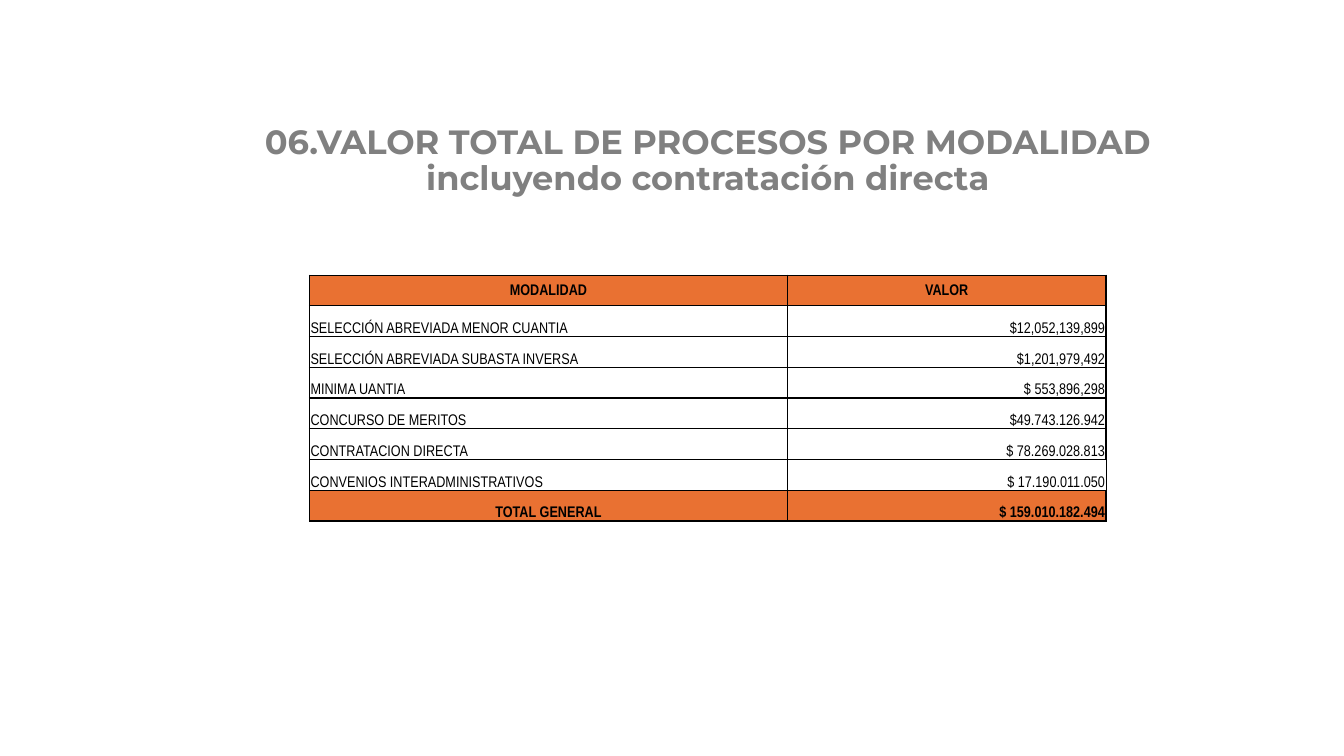
from lxml import etree
from pptx import Presentation
from pptx.dml.color import RGBColor
from pptx.enum.text import MSO_ANCHOR, PP_ALIGN
from pptx.oxml.ns import qn
from pptx.util import Inches, Pt

LEFT, CENTER, RIGHT = PP_ALIGN.LEFT, PP_ALIGN.CENTER, PP_ALIGN.RIGHT
MIDDLE, BOTTOM = MSO_ANCHOR.MIDDLE, MSO_ANCHOR.BOTTOM

SLIDE_WIDTH, SLIDE_HEIGHT = 13.33, 7.5
TITLE_LINES = ["06.VALOR TOTAL DE PROCESOS POR MODALIDAD", "incluyendo contratación directa"]
ROWS = [
    ("MODALIDAD", "VALOR"),
    ("SELECCIÓN ABREVIADA MENOR CUANTIA", "$12,052,139,899"),
    ("SELECCIÓN ABREVIADA SUBASTA INVERSA", "$1,201,979,492"),
    ("MINIMA UANTIA", "$ 553,896,298"),
    ("CONCURSO DE MERITOS", "$49.743.126.942"),
    ("CONTRATACION DIRECTA", "$ 78.269.028.813"),
    ("CONVENIOS INTERADMINISTRATIVOS", "$ 17.190.011.050"),
    ("TOTAL GENERAL", "$ 159.010.182.494"),
]
COLUMN_SHARES = (0.6, 0.4)
THIN, THICK = 0.5, 1
HORIZONTAL_RULES = (THICK, THICK, THIN, THIN, THICK, THICK, THIN, THIN, THICK)
OUTER_RULES = (THICK,) * 6 + (THIN, THICK)
INNER_RULES = (THICK,) + (THIN,) * 6 + (THICK,)
ORANGE, GREY, BLACK = "E97132", "808080", "000000"


def color(value):
    """Turn a hex string into a colour."""
    return RGBColor.from_string(value)


def add_run(paragraph, text, font_name, size, font_color, bold):
    """Add one formatted run to a paragraph."""
    run = paragraph.add_run()
    run.text = text
    run.font.name = font_name
    run.font.size = Pt(size)
    run.font.bold = bold
    run.font.color.rgb = color(font_color)


def fill_title(title, lines):
    """Place the title and write its lines."""
    title.left, title.top = Inches(1.48), Inches(1.12)
    title.width, title.height = Inches(11.08), Inches(0.89)
    title.text_frame.vertical_anchor = BOTTOM
    title.text_frame.word_wrap = True
    paragraph = title.text_frame.paragraphs[0]
    paragraph.alignment = CENTER
    paragraph.line_spacing = 0.9
    for index, line in enumerate(lines):
        if index:
            paragraph.add_line_break()
        add_run(paragraph, line, "Montserrat", 24, GREY, True)


def set_borders(cell, widths):
    """Draw the left, right, top and bottom borders of a cell."""
    properties = cell._tc.get_or_add_tcPr()
    for side, width in zip("LRTB", widths):
        line = etree.SubElement(properties, qn(f"a:ln{side}"), w=str(Pt(width)))
        solid = etree.SubElement(line, qn("a:solidFill"))
        etree.SubElement(solid, qn("a:srgbClr"), val=BLACK)


def fill_cell(cell, text, alignment, anchor, emphasized):
    """Write a cell and set its margins and fill."""
    cell.margin_left = cell.margin_right = cell.margin_top = Inches(0.01)
    cell.margin_bottom = 0
    cell.vertical_anchor = anchor
    if emphasized:
        cell.fill.solid()
        cell.fill.fore_color.rgb = color(ORANGE)
    else:
        cell.fill.background()
    paragraph = cell.text_frame.paragraphs[0]
    paragraph.alignment = alignment
    add_run(paragraph, text, "Arial Narrow", 11, BLACK, emphasized)


def add_value_table(slide, left, top, width, height):
    """Add the table of values with a header and a total row."""
    shape = slide.shapes.add_table(
        len(ROWS), len(COLUMN_SHARES), Inches(left), Inches(top), Inches(width), Inches(height))
    table = shape.table
    table.first_row = table.horz_banding = False
    for column, share in zip(table.columns, COLUMN_SHARES):
        column.width = Inches(width * share)
    last = len(ROWS) - 1
    for row, texts in enumerate(ROWS):
        outer, inner = OUTER_RULES[row], INNER_RULES[row]
        sides = ((outer, inner), (inner, outer))
        emphasized = row in (0, last)
        alignments = (CENTER if emphasized else LEFT, RIGHT if row else CENTER)
        for column, text in enumerate(texts):
            cell = table.cell(row, column)
            set_borders(cell, sides[column] + HORIZONTAL_RULES[row:row + 2])
            fill_cell(cell, text, alignments[column], BOTTOM if row else MIDDLE, emphasized)


def main():
    """Build and save the slide."""
    presentation = Presentation()
    presentation.slide_width = Inches(SLIDE_WIDTH)
    presentation.slide_height = Inches(SLIDE_HEIGHT)
    slide = presentation.slides.add_slide(presentation.slide_layouts[5])
    fill_title(slide.shapes.title, TITLE_LINES)
    add_value_table(slide, 3.07, 2.73, 7.9, 2.44)
    presentation.save("out.pptx")


if __name__ == "__main__":
    main()
